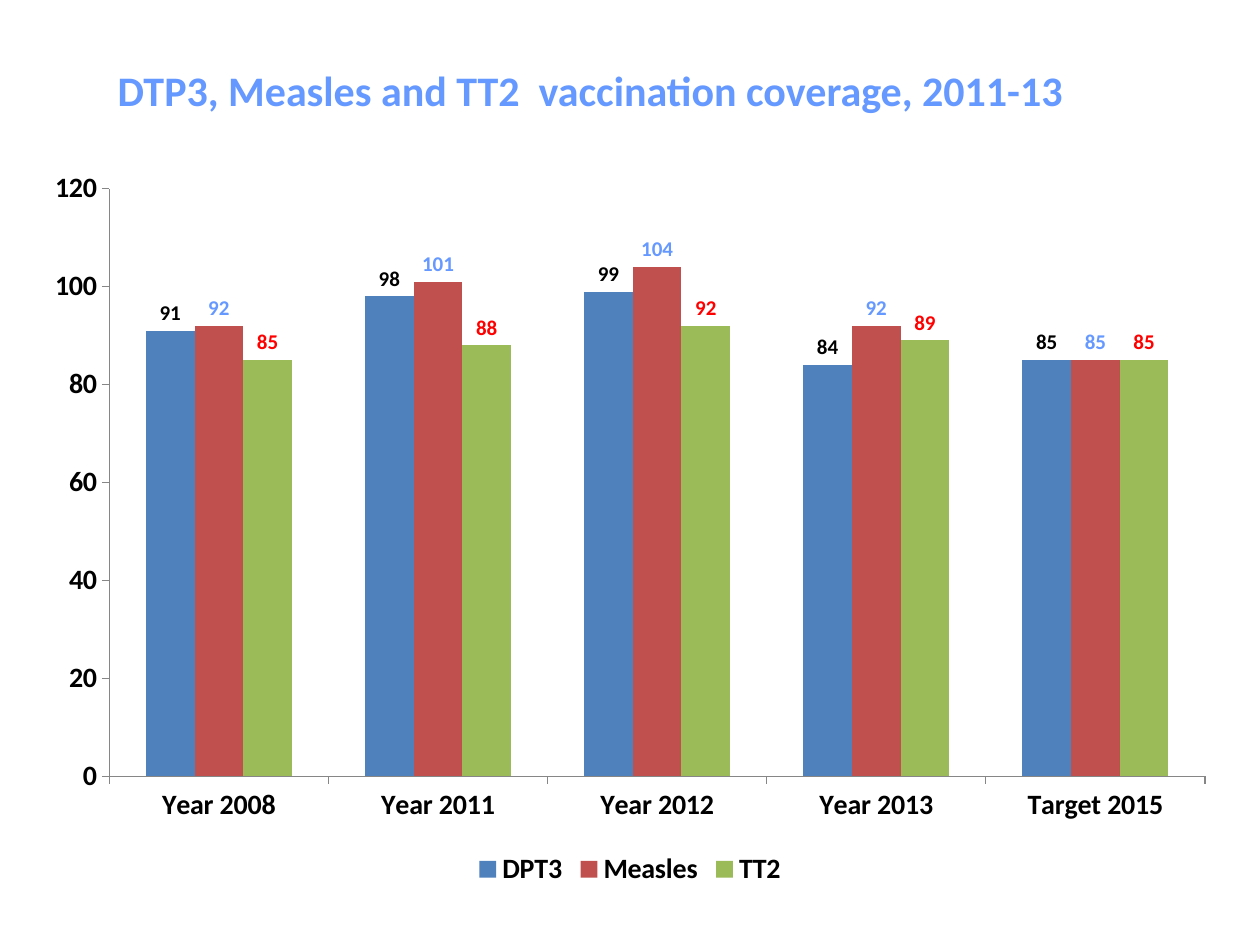
from pptx import Presentation
from pptx.chart.data import CategoryChartData
from pptx.dml.color import RGBColor
from pptx.enum.chart import (XL_CHART_TYPE as ChartType, XL_LABEL_POSITION as LabelPosition,
                             XL_LEGEND_POSITION as LegendPosition, XL_TICK_MARK as TickMark)
from pptx.enum.text import MSO_ANCHOR as Anchor, PP_ALIGN as Align
from pptx.util import Emu, Pt

PX_PER_INCH = 126
FONT = "Calibri"
CATEGORIES = ["Year 2008", "Year 2011", "Year 2012", "Year 2013", "Target 2015"]
COVERAGE = [
    ("DPT3", [91, 98, 99, 84, 85], "4F81BD", "000000"),
    ("Measles", [92, 101, 104, 92, 85], "C0504D", "6699FF"),
    ("TT2", [85, 88, 92, 89, 85], "9BBB59", "FF0000"),
]


def px(length):
    """Turn pixels into EMU."""
    return Emu(round(length * 914400 / PX_PER_INCH))


def rgb(code):
    """Turn a hex string into a colour."""
    return RGBColor.from_string(code)


def format_font(font, size, color="000000", bold=True):
    """Set the typeface, size, colour and weight of a font."""
    font.name, font.size, font.bold = FONT, Pt(size), bold
    font.color.rgb = rgb(color)


def write_text(shape, text, align=Align.LEFT, anchor=Anchor.TOP, **font_format):
    """Write one formatted paragraph into a shape."""
    frame = shape.text_frame
    frame.word_wrap = True
    frame.vertical_anchor = anchor
    paragraph = frame.paragraphs[0]
    paragraph.alignment = align
    run = paragraph.add_run()
    run.text = text
    format_font(run.font, **font_format)


def place_title(slide, text, left, top, width, height):
    """Move the title placeholder and fill it."""
    title = slide.shapes.title
    title.left, title.top, title.width, title.height = map(px, (left, top, width, height))
    write_text(title, text, anchor=Anchor.MIDDLE, size=24, color="6699FF")


def format_axis(axis):
    """Give an axis outside ticks, a thin grey line and bold labels."""
    axis.has_major_gridlines = False
    axis.major_tick_mark = TickMark.OUTSIDE
    axis.minor_tick_mark = TickMark.NONE
    axis.format.line.color.rgb = rgb("868686")
    axis.format.line.width = Pt(0.75)
    format_font(axis.tick_labels.font, 16)


def format_series(series, fill_color, label_color):
    """Colour the columns of a series and show their values."""
    series.invert_if_negative = False
    series.format.fill.solid()
    series.format.fill.fore_color.rgb = rgb(fill_color)
    labels = series.data_labels
    labels.show_value = True
    labels.position = LabelPosition.OUTSIDE_END
    format_font(labels.font, 12, label_color)


def add_coverage_chart(slide, left, top, width, height):
    """Add the clustered column chart of vaccination coverage."""
    data = CategoryChartData()
    data.categories = CATEGORIES
    for name, values, _, _ in COVERAGE:
        data.add_series(name, values)
    chart = slide.shapes.add_chart(
        ChartType.COLUMN_CLUSTERED, *map(px, (left, top, width, height)), data).chart
    format_font(chart.font, 10, bold=False)
    chart.has_title = False
    chart.has_legend = True
    chart.legend.position = LegendPosition.BOTTOM
    chart.legend.include_in_layout = False
    format_font(chart.legend.font, 16)
    format_axis(chart.category_axis)
    format_axis(chart.value_axis)
    chart.value_axis.minimum_scale, chart.value_axis.maximum_scale = 0, 120
    chart.value_axis.major_unit = 20
    plot = chart.plots[0]
    plot.gap_width, plot.overlap = 150, 0
    plot.vary_by_categories = False
    for series, (_, _, fill_color, label_color) in zip(plot.series, COVERAGE):
        format_series(series, fill_color, label_color)


def main():
    """Build the slide and save it."""
    presentation = Presentation()
    presentation.slide_width, presentation.slide_height = px(1260), px(945)
    slide = presentation.slides.add_slide(presentation.slide_layouts[5])
    add_coverage_chart(slide, 31, 157, 1198, 735)
    place_title(slide, "DTP3, Measles and TT2  vaccination coverage, 2011-13", 105, 58, 1050, 64)
    presentation.save("out.pptx")


if __name__ == "__main__":
    main()
